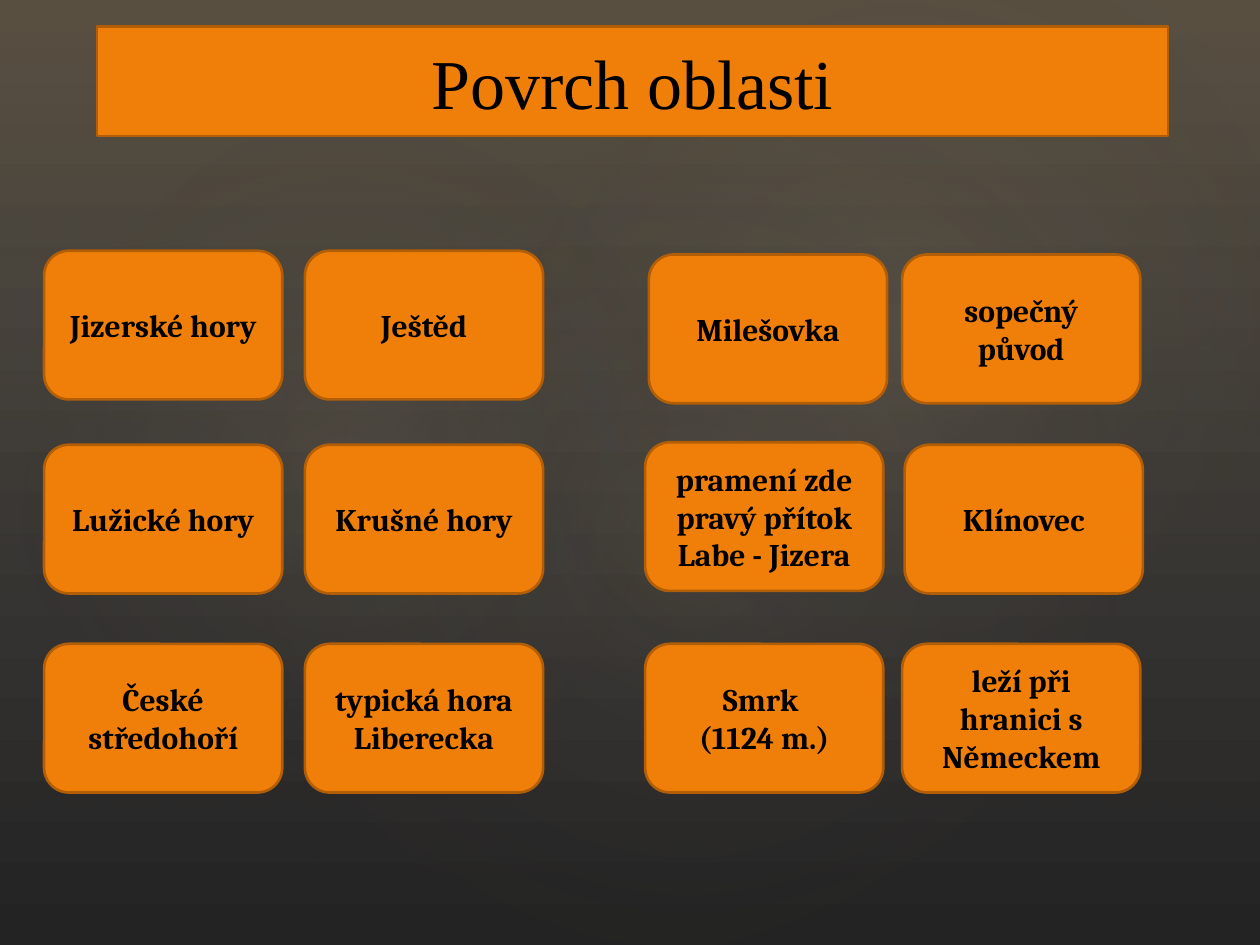
"""Build a slide of matching cards about the relief of a region."""
from dataclasses import dataclass

from lxml import etree
from pptx import Presentation
from pptx.dml.color import RGBColor
from pptx.enum import shapes, text
from pptx.oxml import ns
from pptx.util import Inches, Pt


@dataclass(frozen=True)
class Theme:
    """Colours, fonts and type sizes of the slide."""
    card: str = "F07F09"
    edge: str = "B25E07"
    ink: str = "000000"
    sky: tuple = ("515151", "222222")
    veil: tuple = ("674D26", "323232")
    glow: tuple = ("DAC19B", "323232")
    head: str = "Times New Roman"
    body: str = "Cambria"
    big: int = 40
    small: int = 18


THEME = Theme()
SIZE = (1.89, 1.18)
COLS = (0.35, 2.42, 5.12, 7.16)
ROWS = (1.99, 3.53, 5.11)
CARDS = (
    ("Jizerské hory", "Ještěd", "Milešovka", "sopečný původ"),
    ("Lužické hory", "Krušné hory", "pramení zde pravý přítok Labe - Jizera", "Klínovec"),
    ("České středohoří", "typická hora Liberecka", "Smrk \n(1124 m.)",
     "leží při hranici s Německem"),
)
NUDGE = {(0, 2): (0.03, 0.03), (0, 3): (0, 0.03), (1, 2): (0, -0.02), (1, 3): (0.02, 0)}
GLOWS = (
    ((1.5, 1.14, 7.92, 6.24), 328.7, 7),
    ((-0.3, 1.28, 6.06, 4.9), 294.3, 8),
    ((3.58, 0.13, 7.09, 5.2), 328.7, 8),
)


def blend(fill, hues, end=1.0):
    """Set a two-stop gradient that runs downwards."""
    fill.gradient()
    fill.gradient_angle = 270
    for stop, hue, spot in zip(fill.gradient_stops, hues, (0, end)):
        stop.color.rgb = RGBColor.from_string(hue)
        stop.position = spot


def fade(shape, parts):
    """Give each gradient stop an opacity in percent."""
    for hue, part in zip(shape._element.spPr.iter(ns.qn("a:srgbClr")), parts):
        etree.SubElement(hue, ns.qn("a:alpha"), val=str(part * 1000))


def round_off(shape):
    """Turn a linear gradient into a circular one."""
    line = shape._element.spPr.find(".//" + ns.qn("a:lin"))
    ring = etree.Element(ns.qn("a:path"), path="circle")
    etree.SubElement(ring, ns.qn("a:fillToRect"),
                     {side: "50000" for side in "ltrb"})
    line.getparent().replace(line, ring)


def add_shape(slide, kind, box):
    """Add a preset shape without shadow."""
    shape = slide.shapes.add_shape(kind, *map(Inches, box))
    shape.shadow.inherit = False
    return shape


def add_veil(slide):
    """Tint the whole slide."""
    veil = add_shape(slide, shapes.MSO_SHAPE.RECTANGLE, (0, 0, 10, 7.5))
    veil.line.fill.background()
    blend(veil.fill, THEME.veil)
    fade(veil, (36, 10))


def add_glow(slide, box, turn, part):
    """Add a soft, turned spot of light."""
    glow = add_shape(slide, shapes.MSO_SHAPE.OVAL, box)
    glow.rotation = turn
    glow.line.fill.background()
    blend(glow.fill, THEME.glow, 0.58)
    fade(glow, (part, 0))
    round_off(glow)


def dress(shape, words, face, size, bold):
    """Colour a card and write its centred text."""
    shape.fill.solid()
    shape.fill.fore_color.rgb = RGBColor.from_string(THEME.card)
    shape.line.color.rgb = RGBColor.from_string(THEME.edge)
    shape.line.width = Pt(1.5)
    frame = shape.text_frame
    frame.word_wrap = True
    frame.auto_size = text.MSO_AUTO_SIZE.NONE
    frame.vertical_anchor = text.MSO_ANCHOR.MIDDLE
    for i, row in enumerate(words.split("\n")):
        para = frame.add_paragraph() if i else frame.paragraphs[0]
        para.alignment = text.PP_ALIGN.CENTER
        run = para.add_run()
        run.text = row
        font = run.font
        font.name, font.size, font.bold = face, Pt(size), bold
        font.color.rgb = RGBColor.from_string(THEME.ink)


def set_title(slide, words):
    """Shape the title placeholder as a rounded banner in front."""
    title = slide.shapes.title
    title.left, title.top, title.width, title.height = map(
        Inches, (0.77, 0.21, 8.5, 0.87))
    form = etree.SubElement(title._element.spPr, ns.qn("a:prstGeom"), prst="roundRect")
    etree.SubElement(form, ns.qn("a:avLst"))
    dress(title, words, THEME.head, THEME.big, False)
    slide.shapes._spTree.append(title._element)


def add_cards(slide):
    """Lay the cards out on their grid."""
    for i, (top, row) in enumerate(zip(ROWS, CARDS)):
        for j, (left, words) in enumerate(zip(COLS, row)):
            dx, dy = NUDGE.get((i, j), (0, 0))
            card = add_shape(slide, shapes.MSO_SHAPE.ROUNDED_RECTANGLE,
                             (left + dx, top + dy, *SIZE))
            dress(card, words, THEME.body, THEME.small, True)


def main():
    """Build and save the slide."""
    deck = Presentation()
    deck.slide_width, deck.slide_height = Inches(10), Inches(7.5)
    slide = deck.slides.add_slide(deck.slide_layouts[5])
    blend(slide.background.fill, THEME.sky)
    add_veil(slide)
    for glow in GLOWS:
        add_glow(slide, *glow)
    set_title(slide, "Povrch oblasti")
    add_cards(slide)
    deck.save("out.pptx")


if __name__ == "__main__":
    main()
